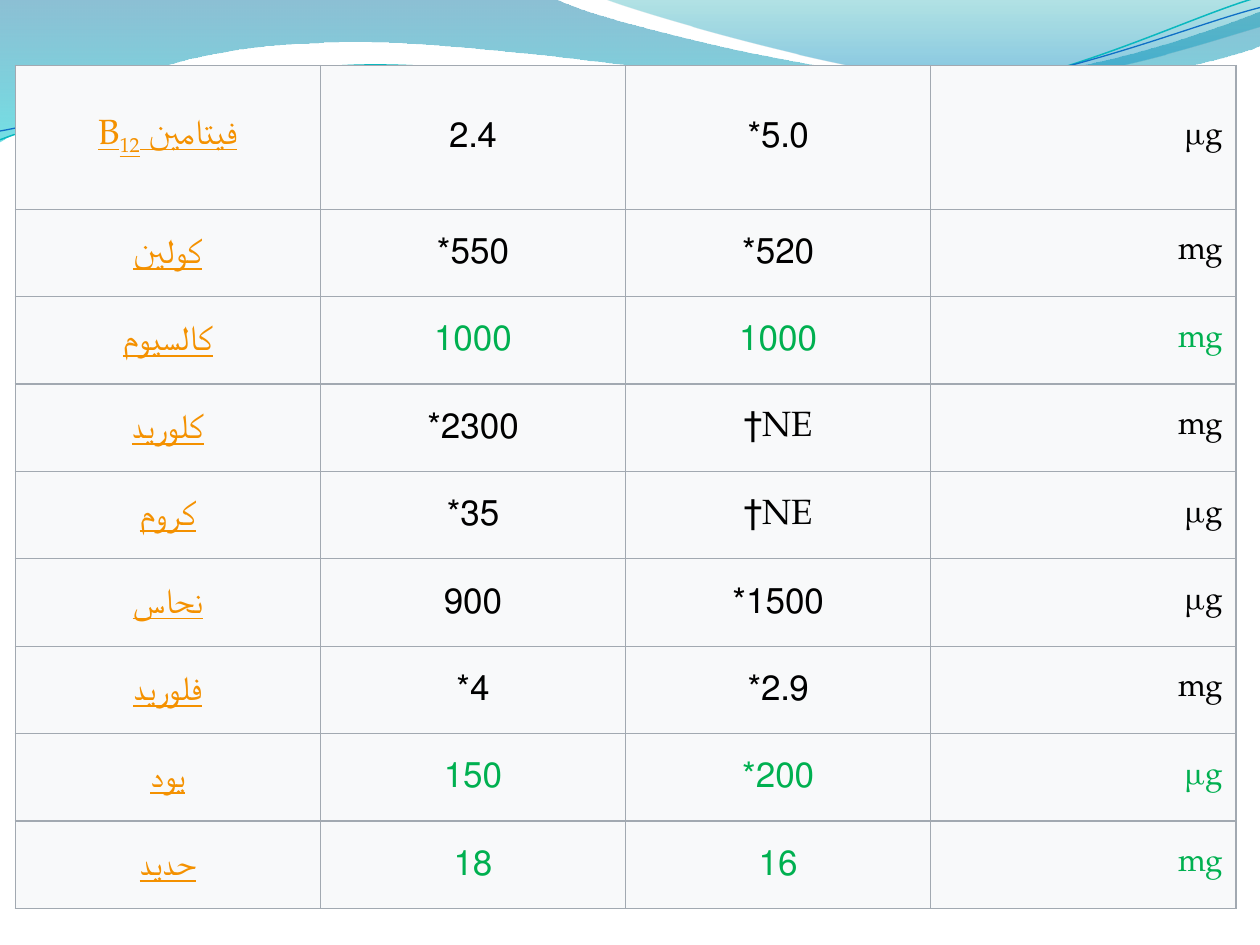
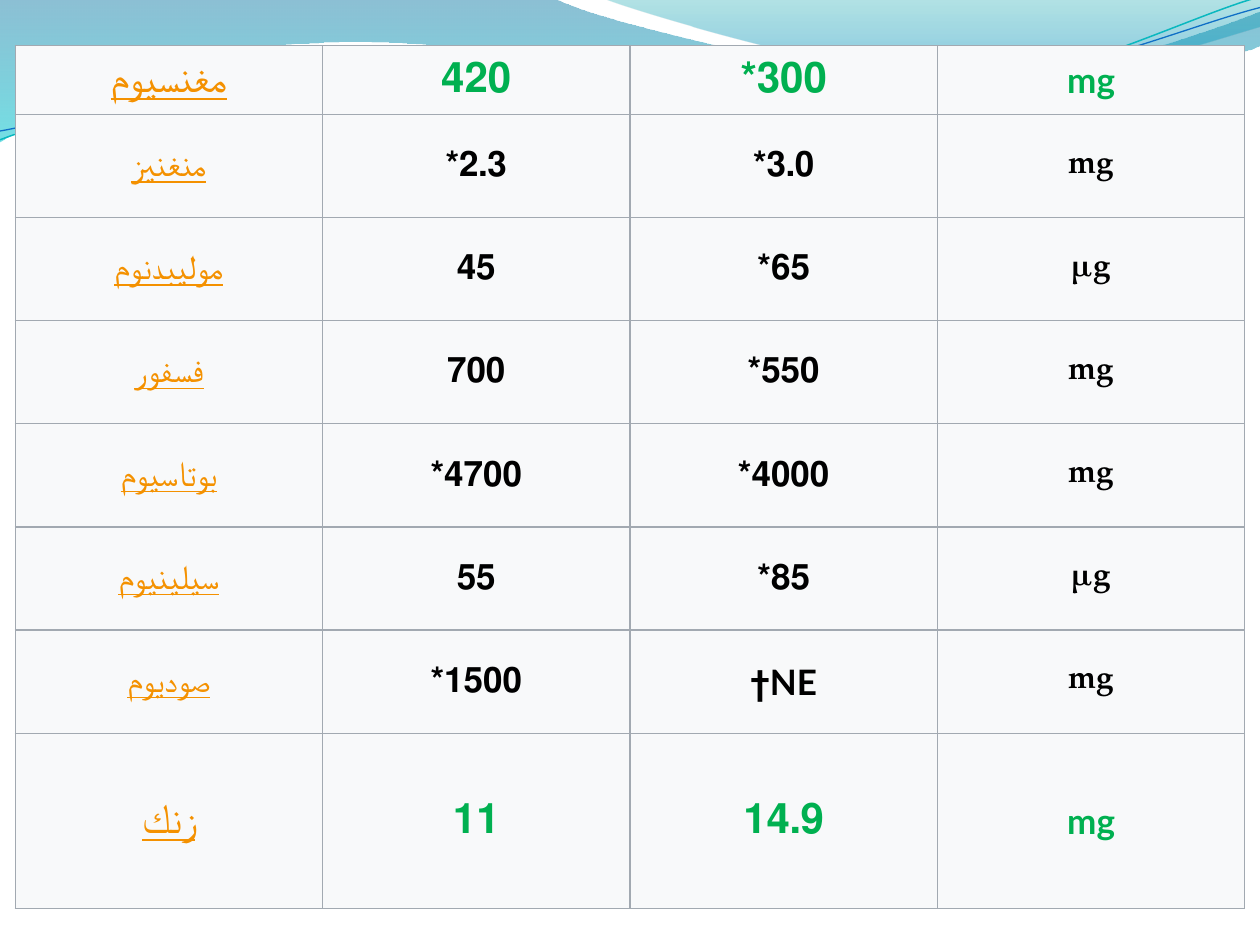
"""Build two slides of daily mineral allowances over a shared wave header."""
from dataclasses import dataclass

from lxml import etree
from pptx import Presentation
from pptx.dml.color import RGBColor
from pptx.enum.text import MSO_ANCHOR, PP_ALIGN
from pptx.oxml.ns import qn
from pptx.util import Inches, Pt

CENTER, RIGHT = PP_ALIGN.CENTER, PP_ALIGN.RIGHT
MIDDLE = MSO_ANCHOR.MIDDLE
BLANK_LAYOUT = 6
SLIDE_SIZE = (10, 7.5)


@dataclass(frozen=True)
class Theme:
    """Colours, fonts and type sizes of the presentation."""

    label: str = "F49100"
    plain: str = "000000"
    highlight: str = "00B050"
    cell: str = "F8F9FA"
    border: str = "A2A9B1"
    border_width: float = 0.75
    serif: str = "TeX Gyre Pagella"
    sans: str = "Lato"
    large: int = 24
    body: int = 20
    unit: int = 18


THEME = Theme()

# Each row: label, allowance, second allowance, unit, highlighted
TABLES = [
    {
        "left": 0.12, "top": 0.52, "width": 9.69, "height": 6.69,
        "special_rows": {0: 1.14},
        "font": THEME.serif, "bold": False, "unit_align": RIGHT,
        "highlight_size": THEME.body, "highlight_unit": (THEME.serif, THEME.unit),
        "rows": [
            (("فيتامين B", "12"), "2.4", "5.0*", "µg", False),
            (("كولين",), "550*", "520*", "mg", False),
            (("كالسيوم",), "1000", "1000", "mg", True),
            (("كلوريد",), "2300*", "NE†", "mg", False),
            (("كروم",), "35*", "NE†", "µg", False),
            (("نحاس",), "900", "1500*", "µg", False),
            (("فلوريد",), "4*", "2.9*", "mg", False),
            (("يود",), "150", "200*", "µg", True),
            (("حديد",), "18", "16", "mg", True),
        ],
    },
    {
        "left": 0.12, "top": 0.36, "width": 9.76, "height": 6.85,
        "special_rows": {0: 0.55, 7: 1.39},
        "font": THEME.sans, "bold": True, "unit_align": CENTER,
        "highlight_size": THEME.large, "highlight_unit": (THEME.sans, THEME.body),
        "rows": [
            (("مغنسيوم",), "420", "300*", "mg", True),
            (("منغنيز",), "2.3*", "3.0*", "mg", False),
            (("موليبدنوم",), "45", "65*", "µg", False),
            (("فسفور",), "700", "550*", "mg", False),
            (("بوتاسيوم",), "4700*", "4000*", "mg", False),
            (("سيلينيوم",), "55", "85*", "µg", False),
            (("صوديوم",), "1500*", "NE†", "mg", False),
            (("زنك",), "11", "14.9", "mg", True),
        ],
    },
]

# Each segment is one end point, or two control points and an end point
WAVES = [
    {
        "start": (0, 0),
        "segments": [
            [(4.4, -0.01)],
            [(4.76, 0.17), (6.64, 0.63), (7.58, 0.63)],
            [(8.53, 0.63), (9.58, 0.26), (10, 0.09)],
            [(10.01, 0.36)],
            [(9.83, 0.44), (8.7, 0.76), (7.46, 0.75)],
            [(6.22, 0.75), (3.82, 0.28), (2.57, 0.34)],
            [(1.29, 0.36), (0.46, 0.83), (-0.01, 1.13)],
            [(0, 0)],
        ],
        "gradient": [(0, "0074A1", 45), (1, "00C6CF", 55)],
    },
    {
        "start": (4.79, -0.01),
        "segments": [
            [(5.09, 0.11), (6.82, 0.62), (7.69, 0.65)],
            [(8.56, 0.69), (9.61, 0.32), (10, 0.21)],
            [(10, 0)],
            [(4.79, -0.01)],
        ],
        "gradient": [(0, "00A1A9", 30), (0.8, "008BBF", 45)],
    },
    {
        "start": (0, 1.11),
        "segments": [
            [(0.48, 0.93), (1.58, 0.57), (2.77, 0.52)],
            [(3.95, 0.47), (5.93, 0.89), (7.13, 0.8)],
            [(8.33, 0.71), (9.38, 0.15), (9.98, -0.02)],
        ],
        "line": ("0AB8BF", 0.85),
    },
    {
        "start": (0, 1.04),
        "segments": [
            [(0.47, 0.96), (1.64, 0.61), (2.83, 0.56)],
            [(4.03, 0.51), (5.97, 0.84), (7.17, 0.75)],
            [(8.36, 0.67), (9.41, 0.21), (10, 0.06)],
        ],
        "line": ("0F6FC6", 0.75),
    },
]


def color(value):
    """Return the colour for a hexadecimal value."""
    return RGBColor.from_string(value)


def bend_segments(shape, segments):
    """Turn the straight segments that have control points into curves."""
    lines = list(shape.element.iter(qn("a:lnTo")))
    for line, segment in zip(lines, segments):
        if len(segment) == 1:
            continue
        line.clear()
        curve = etree.Element(qn("a:cubicBezTo"))
        for x, y in segment:
            etree.SubElement(
                curve, qn("a:pt"),
                x=str(Inches(x) - shape.left), y=str(Inches(y) - shape.top),
            )
        line.getparent().replace(line, curve)


def fill_gradient(shape, stops):
    """Fill a shape from top to bottom with translucent colours."""
    shape.fill.gradient()
    shape.fill.gradient_angle = 270
    for stop, (position, value, _) in zip(shape.fill.gradient_stops, stops):
        stop.position = position
        stop.color.rgb = color(value)
    for element, (_, _, opacity) in zip(shape.element.iter(qn("a:srgbClr")), stops):
        etree.SubElement(element, qn("a:alpha"), val=str(opacity * 1000))


def add_wave(slide, wave):
    """Draw one wave and return its shape."""
    segments = wave["segments"]
    builder = slide.shapes.build_freeform(*map(Inches, wave["start"]))
    ends = [tuple(map(Inches, segment[-1])) for segment in segments]
    builder.add_line_segments(ends, close="gradient" in wave)
    shape = builder.convert_to_shape()
    bend_segments(shape, segments)
    shape.shadow.inherit = False
    if "gradient" in wave:
        fill_gradient(shape, wave["gradient"])
        shape.line.fill.background()
    else:
        value, width = wave["line"]
        shape.fill.background()
        shape.line.color.rgb = color(value)
        shape.line.width = Pt(width)
    return shape


def share_waves(layout, slide):
    """Place the waves on the layout so that every slide shows them."""
    tree = layout.element.cSld.spTree
    for index, wave in enumerate(WAVES):
        tree.insert(2 + index, add_wave(slide, wave).element)


def style_cell(cell):
    """Give a cell its fill, anchor and borders."""
    cell.vertical_anchor = MIDDLE
    cell.fill.solid()
    cell.fill.fore_color.rgb = color(THEME.cell)
    properties = cell._tc.get_or_add_tcPr()
    for index, side in enumerate(("lnL", "lnR", "lnT", "lnB")):
        border = etree.Element(qn(f"a:{side}"), w=str(Pt(THEME.border_width)))
        fill = etree.SubElement(border, qn("a:solidFill"))
        etree.SubElement(fill, qn("a:srgbClr"), val=THEME.border)
        properties.insert(index, border)


def write_cell(cell, texts, align, font, size, value, bold=False, underline=False):
    """Write right-to-left text; a second text is a subscript."""
    style_cell(cell)
    paragraph = cell.text_frame.paragraphs[0]
    paragraph.alignment = align
    paragraph._p.get_or_add_pPr().set("rtl", "1")
    for index, text in enumerate(texts):
        run = paragraph.add_run()
        run.text = text
        run.font.name, run.font.size = font, Pt(size)
        run.font.bold, run.font.underline = bold, underline
        run.font.color.rgb = color(value)
        if index:
            run._r.get_or_add_rPr().set("baseline", "-25000")


def add_allowances(slide, content):
    """Add one table of allowances."""
    rows, special = content["rows"], content["special_rows"]
    box = [Inches(content[key]) for key in ("left", "top", "width", "height")]
    table = slide.shapes.add_table(len(rows), 4, *box).table
    table.first_row = table.horz_banding = False
    for column in table.columns:
        column.width = Inches(content["width"] / 4)
    regular = (content["height"] - sum(special.values())) / (len(rows) - len(special))
    font, bold = content["font"], content["bold"]
    for index, (label, first, second, unit, highlighted) in enumerate(rows):
        table.rows[index].height = Inches(special.get(index, regular))
        cells = table.rows[index].cells
        size = content["highlight_size"] if highlighted else THEME.body
        value = THEME.highlight if highlighted else THEME.plain
        unit_style = content["highlight_unit"] if highlighted else (THEME.serif, THEME.unit)
        write_cell(cells[0], label, CENTER, font, size, THEME.label, underline=True)
        for cell, amount in ((cells[1], first), (cells[2], second)):
            write_cell(cell, [amount], CENTER, font, size, value, bold)
        write_cell(cells[3], [unit], content["unit_align"], *unit_style, value, bold)


def main():
    """Build and save the presentation."""
    presentation = Presentation()
    presentation.slide_width, presentation.slide_height = map(Inches, SLIDE_SIZE)
    layout = presentation.slide_layouts[BLANK_LAYOUT]
    slides = [presentation.slides.add_slide(layout) for _ in TABLES]
    share_waves(layout, slides[0])
    for slide, content in zip(slides, TABLES):
        add_allowances(slide, content)
    presentation.save("out.pptx")


if __name__ == "__main__":
    main()
